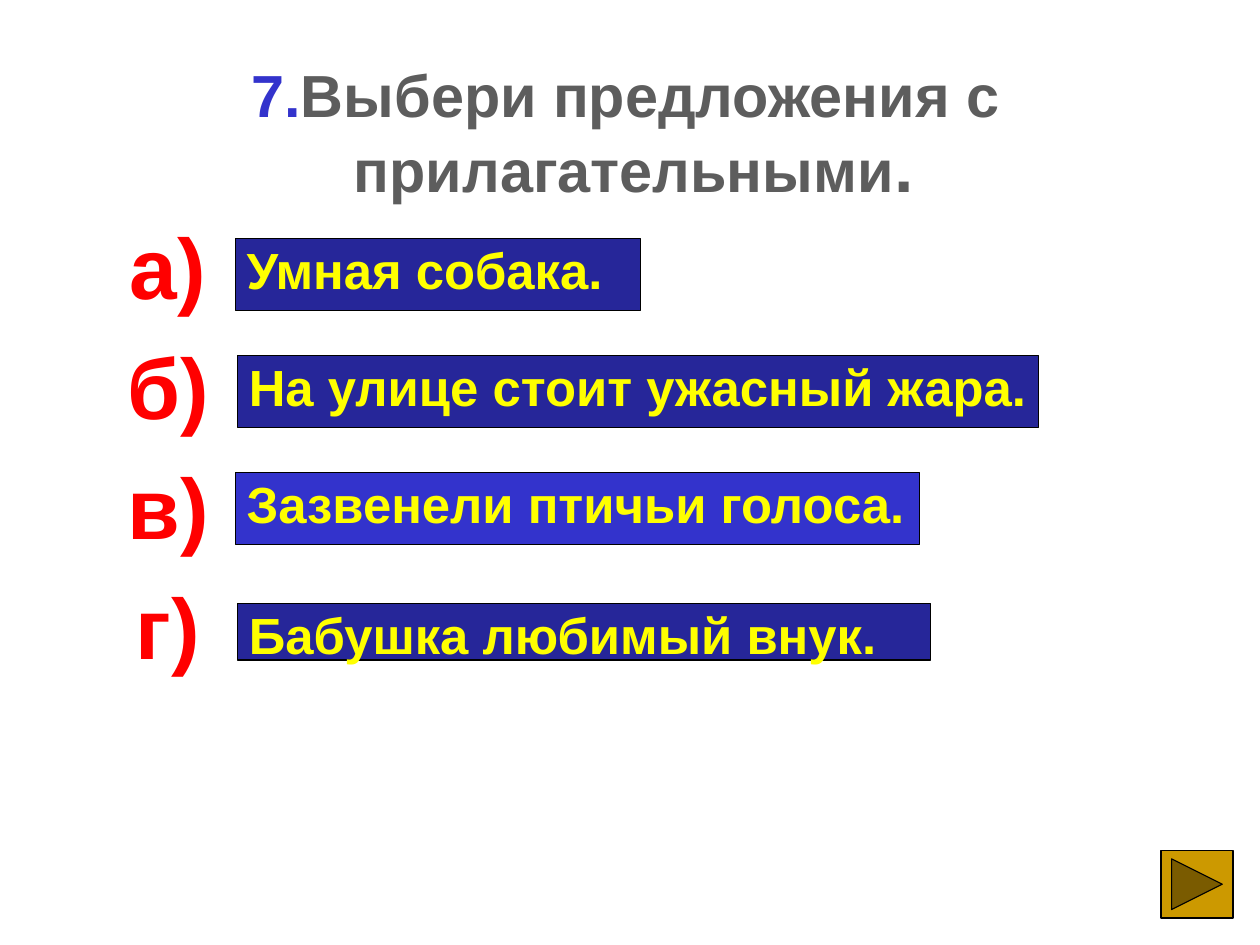
from dataclasses import dataclass

from pptx import Presentation
from pptx.dml.color import RGBColor
from pptx.enum.shapes import MSO_SHAPE
from pptx.enum.text import MSO_ANCHOR, MSO_AUTO_SIZE, PP_ALIGN
from pptx.shapes.autoshape import Shape
from pptx.slide import Slide
from pptx.text.text import TextFrame, _Paragraph
from pptx.util import Cm, Pt

RECTANGLE = MSO_SHAPE.RECTANGLE
FORWARD_BUTTON = MSO_SHAPE.ACTION_BUTTON_FORWARD_OR_NEXT
TOP = MSO_ANCHOR.TOP
FIXED_SIZE = MSO_AUTO_SIZE.NONE
LEFT, CENTER = PP_ALIGN.LEFT, PP_ALIGN.CENTER
TITLE_ONLY = 5


@dataclass(frozen=True)
class Theme:
    font: str = "Arial"
    navy: str = "262699"
    blue: str = "3333CC"
    gray: str = "5D5D5D"
    yellow: str = "FFFF00"
    red: str = "FF0000"
    gold: str = "CC9900"
    black: str = "000000"
    title_size: float = 37.4
    period_size: float = 44
    answer_size: float = 32
    letter_size: float = 54
    line_spacing: float = 0.93
    outline: float = 0.75


@dataclass(frozen=True)
class Answer:
    letter: str
    sentence: str
    left: float
    top: float
    width: float
    height: float
    fill: str


THEME = Theme()
SLIDE_WIDTH, SLIDE_HEIGHT = 28, 21
LETTER_LEFT, LETTER_TOP, LETTER_STEP = 2.48, 4.83, 2.67
LETTER_WIDTH, LETTER_HEIGHT = 2.51, 2.41
ANSWERS = (
    Answer("а)", "Умная собака.", 5.23, 5.3, 9, 1.6, THEME.navy),
    Answer("б)", "На улице стоит ужасный жара.", 5.28, 7.9, 17.8, 1.6, THEME.navy),
    Answer("в)", "Зазвенели птичьи голоса.", 5.23, 10.5, 15.2, 1.6, THEME.blue),
    Answer("г)", "Бабушка любимый внук.", 5.28, 13.41, 15.4, 1.26, THEME.navy),
)


def add_span(para: _Paragraph, text: str, *, size: float, color: str) -> None:
    span = para.add_run()
    span.text = text
    span.font.name = THEME.font
    span.font.size = Pt(size)
    span.font.bold = True
    span.font.color.rgb = RGBColor.from_string(color)


def format_paragraph(para: _Paragraph, align: PP_ALIGN) -> None:
    para.alignment = align
    para.line_spacing = THEME.line_spacing
    para.space_before = Pt(0)


def prepare_frame(frame: TextFrame, *, wrap: bool) -> None:
    frame.auto_size = FIXED_SIZE
    frame.word_wrap = wrap
    frame.vertical_anchor = TOP


def add_panel(slide: Slide, kind: MSO_SHAPE, left: float, top: float,
              width: float, height: float, fill: str) -> Shape:
    panel = slide.shapes.add_shape(kind, Cm(left), Cm(top), Cm(width), Cm(height))
    panel.shadow.inherit = False
    panel.fill.solid()
    panel.fill.fore_color.rgb = RGBColor.from_string(fill)
    panel.line.color.rgb = RGBColor.from_string(THEME.black)
    panel.line.width = Pt(THEME.outline)
    return panel


def add_title(slide: Slide) -> None:
    title = slide.shapes.title
    title.left, title.top, title.width, title.height = Cm(5.25), Cm(1.3), Cm(17.68), Cm(3.5)
    frame = title.text_frame
    prepare_frame(frame, wrap=False)
    first, second = frame.paragraphs[0], frame.add_paragraph()
    for para in (first, second):
        format_paragraph(para, CENTER)
    add_span(first, "7.", size=THEME.title_size, color=THEME.blue)
    add_span(first, "Выбери предложения с ", size=THEME.title_size, color=THEME.gray)
    add_span(second, "прилагательными", size=THEME.title_size, color=THEME.gray)
    add_span(second, ".", size=THEME.period_size, color=THEME.gray)


def add_answer(slide: Slide, answer: Answer, row: int) -> None:
    letter_box = slide.shapes.add_textbox(
        Cm(LETTER_LEFT), Cm(LETTER_TOP + row * LETTER_STEP),
        Cm(LETTER_WIDTH), Cm(LETTER_HEIGHT))
    prepare_frame(letter_box.text_frame, wrap=True)
    para = letter_box.text_frame.paragraphs[0]
    format_paragraph(para, CENTER)
    add_span(para, answer.letter, size=THEME.letter_size, color=THEME.red)

    panel = add_panel(slide, RECTANGLE, answer.left, answer.top,
                      answer.width, answer.height, answer.fill)
    prepare_frame(panel.text_frame, wrap=False)
    para = panel.text_frame.paragraphs[0]
    format_paragraph(para, LEFT)
    add_span(para, answer.sentence, size=THEME.answer_size, color=THEME.yellow)


def main() -> None:
    deck = Presentation()
    deck.slide_width, deck.slide_height = Cm(SLIDE_WIDTH), Cm(SLIDE_HEIGHT)
    slide = deck.slides.add_slide(deck.slide_layouts[TITLE_ONLY])
    add_title(slide)
    for row, answer in enumerate(ANSWERS):
        add_answer(slide, answer, row)
    add_panel(slide, FORWARD_BUTTON, 25.8, 18.9, 1.6, 1.5, THEME.gold)
    deck.save("out.pptx")


if __name__ == "__main__":
    main()
